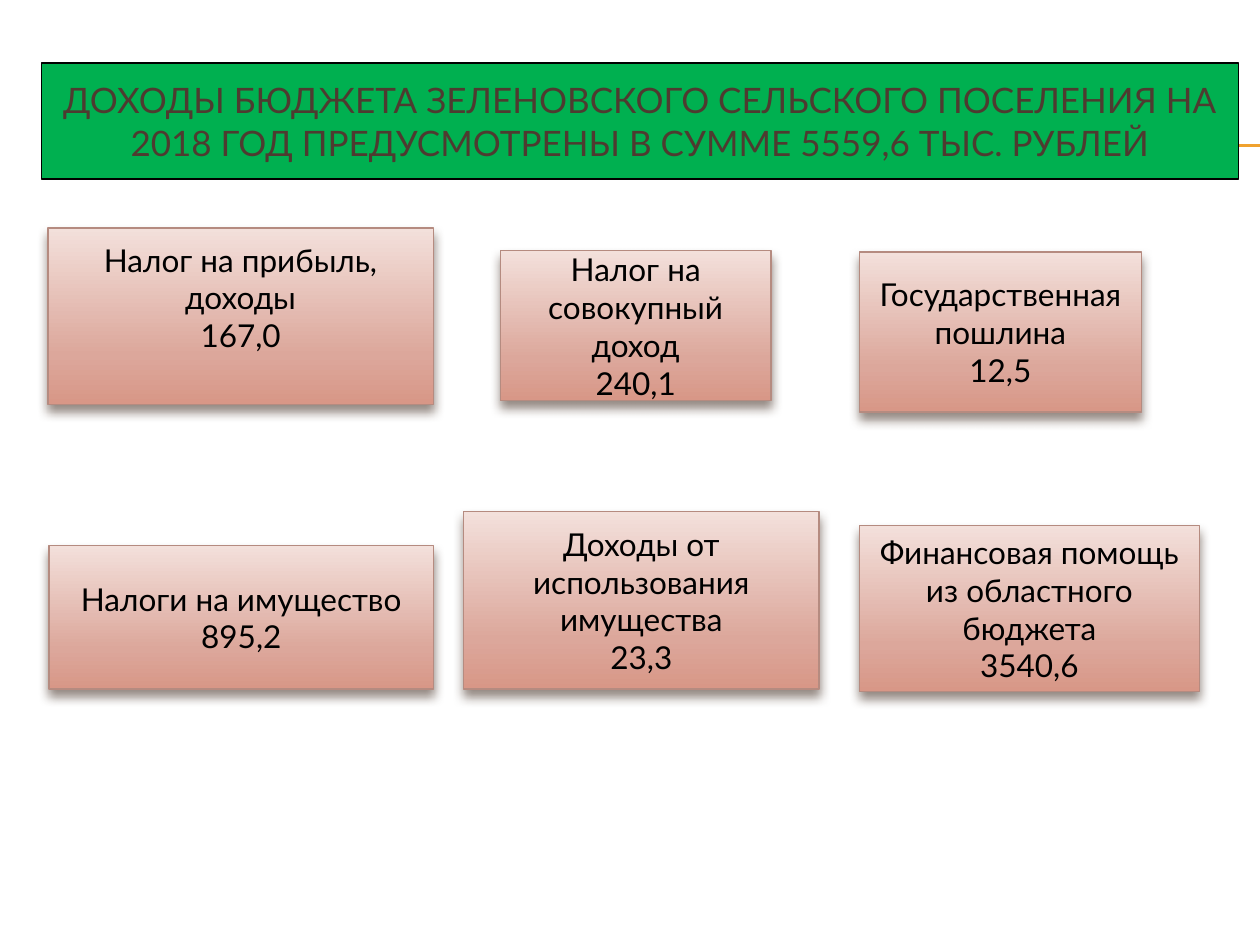
import pptx
import pptx.util
import pptx.oxml
import pptx.oxml.ns
import pptx.dml.color
import pptx.enum.shapes
import pptx.enum.text

COLUMNS, ROWS = 100, 75
NS = pptx.oxml.ns.nsdecls("a")


def color(hex_code):
    return pptx.dml.color.RGBColor.from_string(hex_code)


class BudgetSlide:
    font = "Lato"
    accent = "F0A22E"
    title_ink, title_fill, title_edge = "4E3B30", "00B050", "000000"
    box_ink, box_edge, box_shadow = "000000", "B58B80", "4E3B30"
    box_stops = ((0, "F3E0DB"), (72, "DCA79B"), (100, "D89787"))

    def __init__(self, deck):
        self.slide = deck.slides.add_slide(deck.slide_layouts[6])
        self.column = deck.slide_width / COLUMNS
        self.row = deck.slide_height / ROWS

    def place(self, column, row):
        return round(column * self.column), round(row * self.row)

    def rule(self, start, end, row):
        rule = self.slide.shapes.add_connector(
            pptx.enum.shapes.MSO_CONNECTOR.STRAIGHT,
            *self.place(start, row), *self.place(end, row))
        rule.line.color.rgb = color(self.accent)
        rule.line.width = pptx.util.Pt(0.75)
        rule._element.spPr.append(pptx.oxml.parse_xml(f"<a:effectLst {NS}/>"))

    def panel(self, area, lines, size, ink, edge, edge_width):
        panel = self.slide.shapes.add_shape(
            pptx.enum.shapes.MSO_SHAPE.RECTANGLE,
            *self.place(*area[:2]), *self.place(*area[2:]))
        panel.shadow.inherit = False
        panel.line.color.rgb = color(edge)
        panel.line.width = pptx.util.Pt(edge_width)
        frame = panel.text_frame
        frame.word_wrap = True
        frame.vertical_anchor = pptx.enum.text.MSO_ANCHOR.MIDDLE
        frame.text = "\n".join(lines)
        for paragraph in frame.paragraphs:
            paragraph.alignment = pptx.enum.text.PP_ALIGN.CENTER
            for run in paragraph.runs:
                run.font.name = self.font
                run.font.size = pptx.util.Pt(size)
                run.font.color.rgb = color(ink)
        return panel

    def title(self, area, text):
        banner = self.panel(area, [text], 20, self.title_ink, self.title_edge, 0.75)
        banner.fill.solid()
        banner.fill.fore_color.rgb = color(self.title_fill)

    def income(self, area, source, amount, lift=0):
        box = self.panel(area, [source, amount], 18, self.box_ink, self.box_edge, 0.79)
        box.text_frame.margin_bottom += round(lift * self.row)
        box.fill.gradient()
        box.fill.gradient_angle = 270
        properties = box._element.spPr
        stops = properties.find(".//" + pptx.oxml.ns.qn("a:gsLst"))
        for stop in list(stops):
            stops.remove(stop)
        for share, shade in self.box_stops:
            stops.append(pptx.oxml.parse_xml(
                f'<a:gs {NS} pos="{share * 1000}"><a:srgbClr val="{shade}"/></a:gs>'))
        properties.find(pptx.oxml.ns.qn("a:effectLst")).append(pptx.oxml.parse_xml(
            f'<a:outerShdw {NS} blurRad="{pptx.util.Pt(6)}" dist="{pptx.util.Pt(4)}" '
            f'dir="5400000" rotWithShape="0"><a:srgbClr val="{self.box_shadow}">'
            '<a:alpha val="60000"/></a:srgbClr></a:outerShdw>'))


def main():
    deck = pptx.Presentation()
    deck.slide_width = pptx.util.Inches(10)
    deck.slide_height = pptx.util.Inches(7.5)
    budget = BudgetSlide(deck)
    for row in (11.5, 11.6):
        budget.rule(5.6, COLUMNS, row)
    budget.title((3.3, 5, 95, 9.2),
                 "ДОХОДЫ БЮДЖЕТА ЗЕЛЕНОВСКОГО СЕЛЬСКОГО ПОСЕЛЕНИЯ НА "
                 "2018 ГОД ПРЕДУСМОТРЕНЫ В СУММЕ 5559,6 ТЫС. РУБЛЕЙ")
    budget.income((3.8, 18.1, 30.6, 14), "Налог на прибыль, доходы", "167,0", lift=3)
    incomes = (
        ((39.7, 19.9, 21.5, 11.9), "Налог на совокупный доход", "240,1"),
        ((68.2, 20, 22.4, 12.7), "Государственная пошлина", "12,5"),
        ((3.9, 43.3, 30.5, 11.4), "Налоги на имущество", "895,2"),
        ((68.2, 41.7, 27, 13.2), "Финансовая помощь из областного бюджета", "3540,6"),
        ((36.8, 40.6, 28.2, 14.1), "Доходы от использования имущества", "23,3"),
    )
    for area, source, amount in incomes:
        budget.income(area, source, amount)
    deck.save("out.pptx")


if __name__ == "__main__":
    main()
